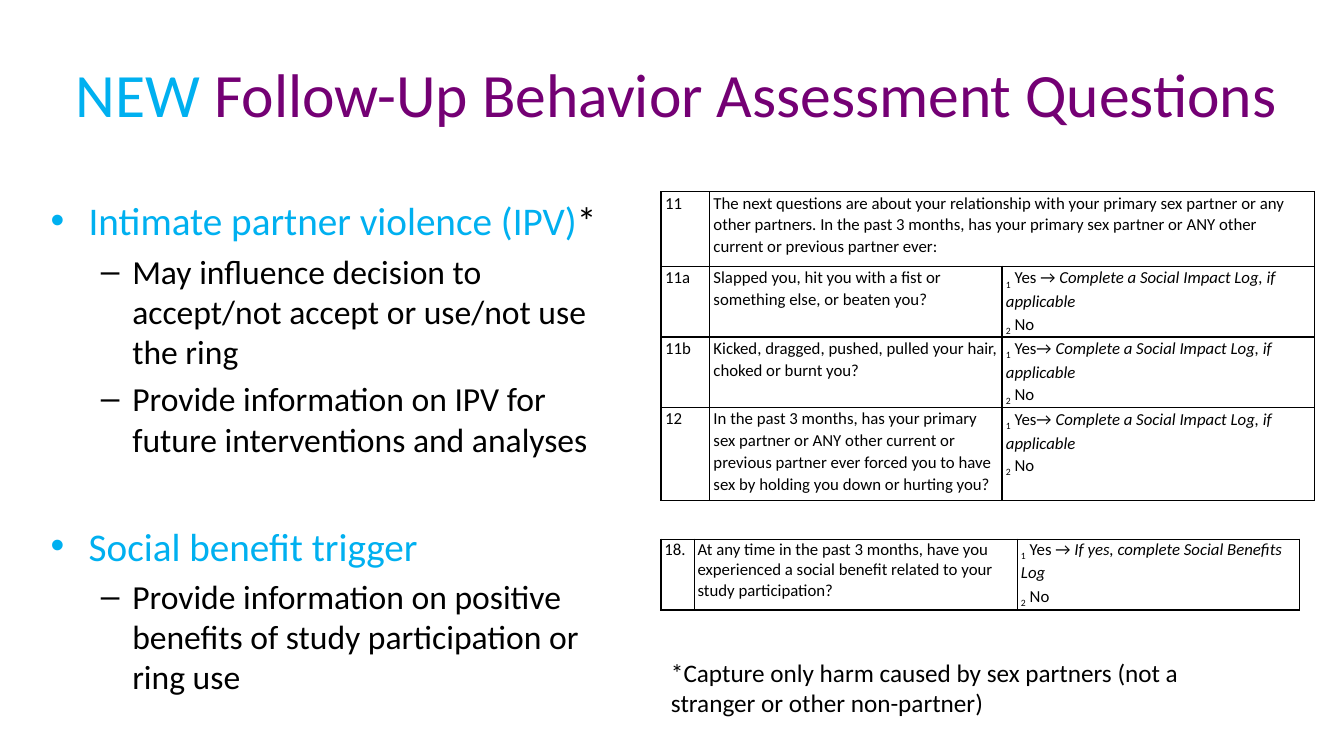
import pptx
import pptx.dml.color
import pptx.enum.text
import pptx.oxml
import pptx.oxml.ns
import pptx.util
from pptx.util import Cm

CYAN = pptx.dml.color.RGBColor(0x00, 0xB0, 0xF0)
PURPLE = pptx.dml.color.RGBColor(0x74, 0x00, 0x74)
BLACK = pptx.dml.color.RGBColor(0x00, 0x00, 0x00)
FONT = "Calibri"

IMPACT = "Complete a Social Impact Log, if applicable"
PARTNER_ROWS = [
    ("11", "The next questions are about your relationship with your primary sex "
     "partner or any other partners. In the past 3 months, has your primary sex "
     "partner or ANY other current or previous partner ever:", None),
    ("11a", "Slapped you, hit you with a fist or something else, or beaten you?",
     (" Yes → ", IMPACT)),
    ("11b", "Kicked, dragged, pushed, pulled your hair, choked or burnt you?",
     (" Yes→ ", IMPACT)),
    ("12", "In the past 3 months, has your primary sex partner or ANY other current "
     "or previous partner ever forced you to have sex by holding you down or "
     "hurting you?", (" Yes→ ", IMPACT)),
]
BENEFIT_ROWS = [
    ("18.", "At any time in the past 3 months, have you experienced a social benefit "
     "related to your study participation?",
     (" Yes → ", "If yes, complete Social Benefits Log")),
]
# Level, spans of text and colour, space before in points (None keeps the template's)
TOPICS = [
    (0, [("Intimate partner violence (IPV)", CYAN), ("*", BLACK)], 0),
    (1, [("May influence decision to accept/not accept or use/not use the ring", BLACK)],
     None),
    (1, [("Provide information on IPV for future interventions and analyses", BLACK)],
     None),
    (0, [("Social benefit trigger", CYAN)], 45),
    (1, [("Provide information on positive benefits of study participation or ring use",
          BLACK)], None),
]
# Bullet, left margin, hanging indent, text size for each level
LEVELS = [("•", Cm(0.96), Cm(0.96), 28), ("–", Cm(2.06), Cm(0.79), 24)]


def style(para, size, color=None):
    para.font.name = FONT
    para.font.size = pptx.util.Pt(size)
    if color is not None:
        para.font.color.rgb = color


def add_spans(para, spans):
    """Add the coloured spans; a single colour is set on the paragraph."""
    for text, color in spans:
        span = para.add_run()
        span.text = text
        target = span if len(spans) > 1 else para
        target.font.color.rgb = color


def place(shape, box):
    shape.left, shape.top, shape.width, shape.height = box


def fill_title(title, box):
    place(title, box)
    para = title.text_frame.paragraphs[0]
    para.alignment = pptx.enum.text.PP_ALIGN.CENTER
    style(para, 44)
    add_spans(para, [("NEW ", CYAN),
                     ("Follow-Up Behavior Assessment Questions", PURPLE)])


def fill_topics(body, box):
    place(body, box)
    frame = body.text_frame
    frame.auto_size = pptx.enum.text.MSO_AUTO_SIZE.NONE
    for index, (level, spans, gap) in enumerate(TOPICS):
        para = frame.add_paragraph() if index else frame.paragraphs[0]
        para.level = level
        mark, margin, hang, size = LEVELS[level]
        props = para._p.get_or_add_pPr()
        props.set("marL", str(margin))
        props.set("indent", str(-hang))
        bullet = pptx.oxml.ns.qn("a:buChar")
        props.append(props.makeelement(bullet, {"char": mark}))
        if gap is not None:
            para.space_before = pptx.util.Pt(gap)
        style(para, size)
        add_spans(para, spans)


def set_borders(cell):
    props = cell._tc.get_or_add_tcPr()
    for index, side in enumerate("LRTB"):
        props.insert(index, pptx.oxml.parse_xml(
            f'<a:ln{side} {pptx.oxml.ns.nsdecls("a")} w="12700">'
            f'<a:solidFill><a:srgbClr val="{BLACK}"/></a:solidFill></a:ln{side}>'))


def add_option(para, number, answer, action=""):
    """Write one answer: lowered code number, answer, action in italics."""
    code = para.add_run()
    code.text = number
    code._r.get_or_add_rPr().set("baseline", "-25000")
    para.add_run().text = answer
    if action:
        span = para.add_run()
        span.text = action
        span.font.italic = True


def add_questions(page, box, rows, widths, heights, inset, spacing, gap):
    """Table of question number, question and answers."""
    table = page.shapes.add_table(len(rows), len(widths), *box).table
    table.first_row = table.horz_banding = False
    for column, width in zip(table.columns, widths):
        column.width = width
    for row, height in zip(table.rows, heights):
        row.height = height
    for index, (number, question, answers) in enumerate(rows):
        cells = [table.cell(index, column) for column in range(len(widths))]
        cells[0].text = number
        cells[1].text = question
        if answers:
            frame = cells[2].text_frame
            add_option(frame.paragraphs[0], "1", *answers)
            frame.paragraphs[0].space_after = pptx.util.Pt(gap)
            add_option(frame.add_paragraph(), "2", " No")
        else:
            cells[1].merge(cells[2])
        for cell in cells:
            cell.fill.background()
            set_borders(cell)
            cell.margin_left = cell.margin_right = inset
            cell.margin_top = cell.margin_bottom = 0
            for para in cell.text_frame.paragraphs:
                para.line_spacing = spacing
                style(para, 12, BLACK)


def add_footnote(page, box):
    frame = page.shapes.add_textbox(*box).text_frame
    frame.word_wrap = True
    para = frame.paragraphs[0]
    para.text = ("*Capture only harm caused by sex partners "
                 "(not a stranger or other non-partner)")
    style(para, 18, BLACK)


def build_page(deck):
    page = deck.slides.add_slide(deck.slide_layouts[1])
    left, right, top = Cm(1.02), Cm(16.66), Cm(4.83)
    # Title and topics
    fill_title(page.shapes.title, (left, Cm(0.76), Cm(32.08), Cm(3.18)))
    fill_topics(page.placeholders[1], (left, top, Cm(14.96), Cm(13.79)))
    # Question tables
    add_questions(page, (right, Cm(13.59), Cm(16.08), Cm(1.78)), BENEFIT_ROWS,
                  [Cm(0.84), Cm(8.15), Cm(7.09)], [Cm(1.78)], Cm(0.08), 1.0, 3)
    add_questions(page, (right, top, Cm(16.46), Cm(7.78)), PARTNER_ROWS,
                  [Cm(1.22), Cm(7.37), Cm(7.87)],
                  [Cm(1.88), Cm(1.78), Cm(1.78), Cm(2.34)], Cm(0.1), 1.07, 0)
    # Footnote
    add_footnote(page, (right, Cm(16.43), Cm(14.91), Cm(1.8)))


def main():
    deck = pptx.Presentation()
    deck.slide_width, deck.slide_height = Cm(33.87), Cm(19.05)
    build_page(deck)
    deck.save("out.pptx")


if __name__ == "__main__":
    main()
